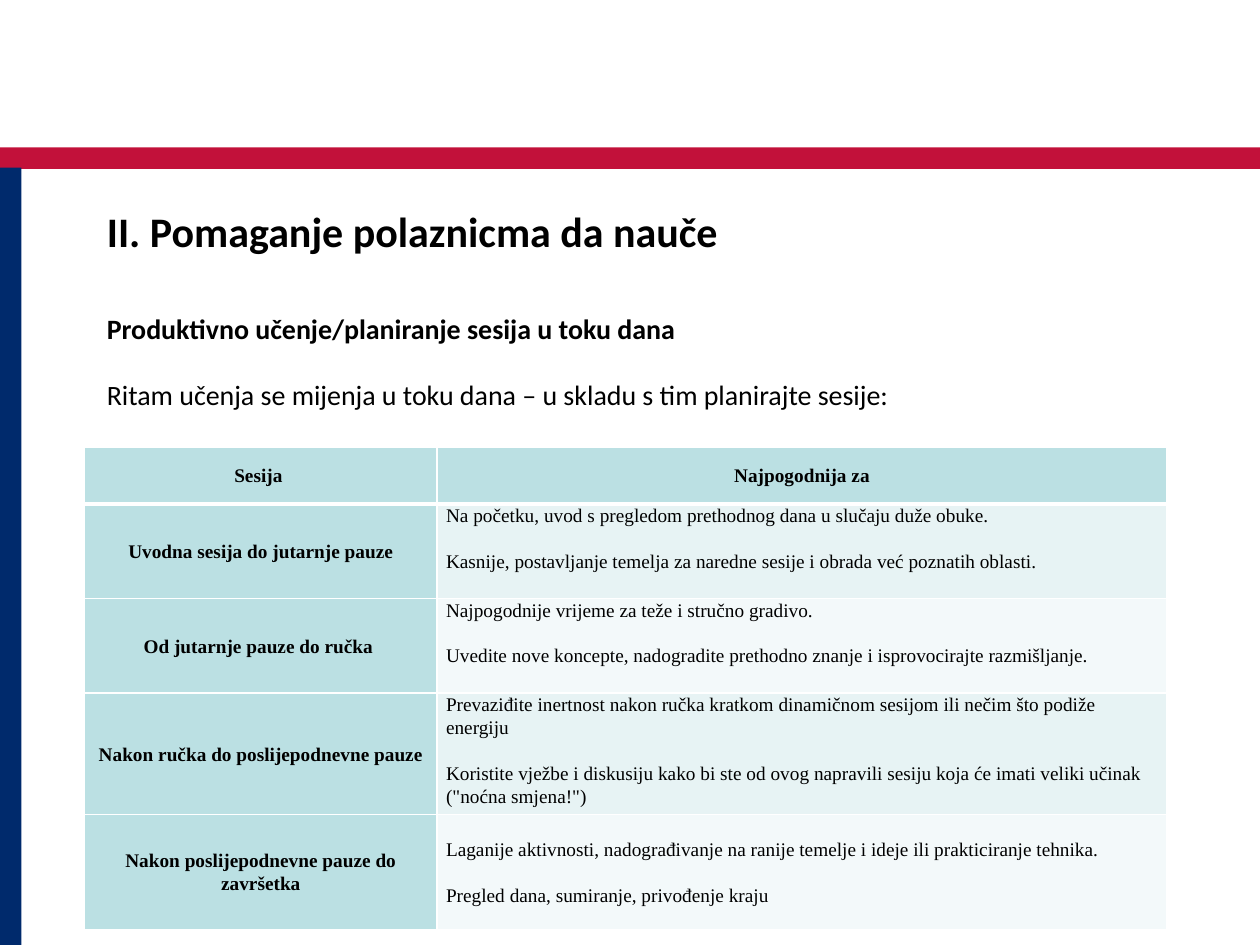
from lxml import etree
from pptx import Presentation
from pptx.dml.color import RGBColor
from pptx.enum.shapes import MSO_SHAPE
from pptx.enum.text import MSO_ANCHOR, PP_ALIGN
from pptx.oxml.ns import qn
from pptx.util import Inches, Pt

COLORS = {
    "red": "C2113A", "navy": "002A6C", "black": "000000", "white": "FFFFFF",
    "teal": "BBE0E3", "band_dark": "E7F3F4", "band_light": "F3F9FA",
}
HEADERS = ["Sesija ", "Najpogodnija za"]
SESSIONS = [
    ("Uvodna sesija do jutarnje pauze", [
        "Na početku, uvod s pregledom prethodnog dana u slučaju duže obuke.",
        "Kasnije, postavljanje temelja za naredne sesije i obrada već poznatih oblasti."]),
    ("Od jutarnje pauze do ručka ", [
        "Najpogodnije vrijeme za teže i stručno gradivo.",
        "Uvedite nove koncepte, nadogradite prethodno znanje i isprovocirajte razmišljanje."]),
    ("Nakon ručka do poslijepodnevne pauze", [
        "Prevaziđite inertnost nakon ručka kratkom dinamičnom sesijom ili nečim što podiže energiju",
        "Koristite vježbe i diskusiju kako bi ste od ovog napravili sesiju koja će imati "
        "veliki učinak (\"noćna smjena!\")"]),
    ("Nakon poslijepodnevne pauze do završetka", [
        "Laganije aktivnosti, nadograđivanje na ranije temelje i ideje ili prakticiranje tehnika.",
        "Pregled dana, sumiranje, privođenje kraju"]),
]
COL_WIDTHS = [2.8, 5.79]
ROW_HEIGHTS = [0.45, 0.75, 0.75, 0.91, 0.91]


def rgb(name):
    return RGBColor.from_string(COLORS[name])


def add_bar(s, x, y, w, h, color):
    bar = s.shapes.add_shape(MSO_SHAPE.RECTANGLE, Inches(x), Inches(y), Inches(w), Inches(h))
    bar.shadow.inherit = False
    bar.fill.solid()
    bar.fill.fore_color.rgb = rgb(color)
    bar.line.fill.background()


def write_paragraphs(tf, texts, font, size, bolds, gap=0, align=PP_ALIGN.LEFT, spacing=1.0):
    """Fill a text frame, with a gap in points between paragraphs."""
    tf.word_wrap = True
    for i, (text, bold) in enumerate(zip(texts, bolds)):
        p = tf.paragraphs[0] if i == 0 else tf.add_paragraph()
        p.text = text
        p.alignment = align
        p.line_spacing = spacing
        if i:
            p.space_before = Pt(gap)
        for r in p.runs:
            r.font.name = font
            r.font.size = Pt(size)
            r.font.bold = bold
            r.font.color.rgb = rgb("black")


def add_text(s, x, y, w, h, texts, size, bolds, gap=0):
    box = s.shapes.add_textbox(Inches(x), Inches(y), Inches(w), Inches(h))
    write_paragraphs(box.text_frame, texts, "Calibri", size, bolds, gap)


def set_borders(cell, bottom):
    tc_pr = cell._tc.get_or_add_tcPr()
    for i, (side, width) in enumerate([("L", 1), ("R", 1), ("T", 1), ("B", bottom)]):
        ln = etree.Element(qn(f"a:ln{side}"), w=str(Pt(width)))
        fill = etree.SubElement(ln, qn("a:solidFill"))
        etree.SubElement(fill, qn("a:srgbClr"), val=COLORS["white"])
        tc_pr.insert(i, ln)


def fill_cell(cell, texts, color, heading=True, anchor=MSO_ANCHOR.MIDDLE, bottom=1):
    cell.margin_left = cell.margin_right = Inches(0.07)
    cell.margin_top = cell.margin_bottom = 0
    cell.vertical_anchor = anchor
    cell.fill.solid()
    cell.fill.fore_color.rgb = rgb(color)
    set_borders(cell, bottom)
    align = PP_ALIGN.CENTER if heading else PP_ALIGN.LEFT
    write_paragraphs(cell.text_frame, texts, "Times New Roman", 11,
                     [heading] * len(texts), 13, align, 1.07)


def add_sessions_table(s):
    frame = s.shapes.add_table(len(ROW_HEIGHTS), len(COL_WIDTHS), Inches(0.67), Inches(3.55),
                               Inches(sum(COL_WIDTHS)), Inches(sum(ROW_HEIGHTS)))
    table = frame.table
    for col, width in zip(table.columns, COL_WIDTHS):
        col.width = Inches(width)
    for row, height in zip(table.rows, ROW_HEIGHTS):
        row.height = Inches(height)
    for c, header in enumerate(HEADERS):
        fill_cell(table.cell(0, c), [header], "teal", bottom=3)
    for r, (session, advice) in enumerate(SESSIONS, start=1):
        fill_cell(table.cell(r, 0), [session], "teal")
        band = "band_dark" if r % 2 else "band_light"
        anchor = MSO_ANCHOR.MIDDLE if r == len(SESSIONS) else MSO_ANCHOR.TOP
        fill_cell(table.cell(r, 1), advice, band, heading=False, anchor=anchor)


def main():
    prs = Presentation()
    prs.slide_width, prs.slide_height = Inches(10), Inches(7.5)
    s = prs.slides.add_slide(prs.slide_layouts[6])
    add_bar(s, 0, 1.17, 10, 0.17, "red")
    add_bar(s, 0, 1.33, 0.17, 6.17, "navy")
    add_text(s, 0.75, 1.58, 8.5, 0.67, ["II. Pomaganje polaznicma da nauče"], 24, [True])
    add_text(s, 0.75, 2.42, 8.67, 5, [
        "Produktivno učenje/planiranje sesija u toku dana",
        "Ritam učenja se mijenja u toku dana – u skladu s tim planirajte sesije:",
    ], 16, [True, False], gap=19)
    add_sessions_table(s)
    prs.save("out.pptx")


if __name__ == "__main__":
    main()
